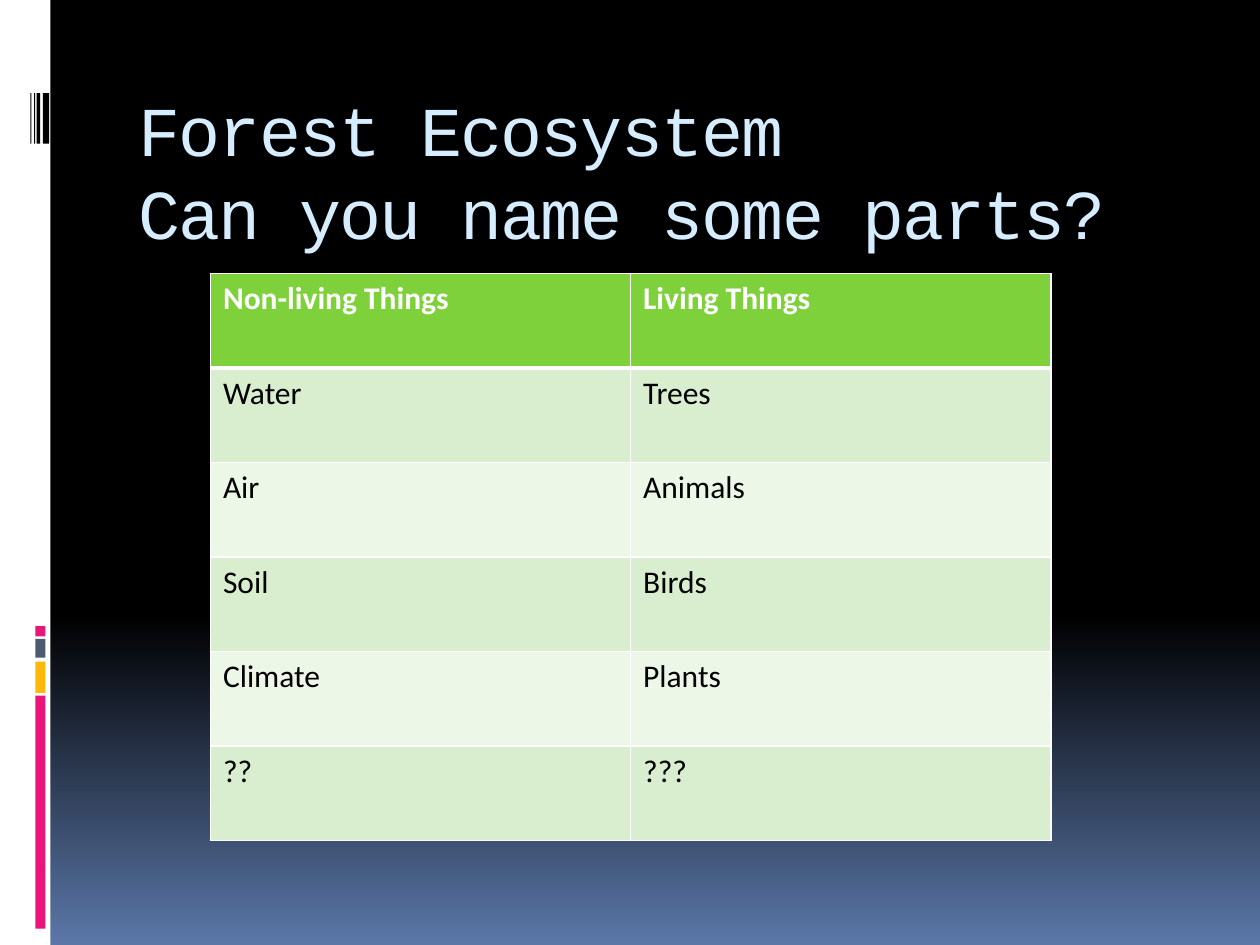
import copy

import pptx
import pptx.dml.color
import pptx.enum.shapes
import pptx.enum.text
import pptx.oxml
import pptx.oxml.ns
import pptx.util

Inches = pptx.util.Inches
Pt = pptx.util.Pt


def rgb(value):
    return pptx.dml.color.RGBColor.from_string(value)


def write(tf, text, font="Calibri", size=18, color="000000", bold=False,
          spacing=None, leading=None):
    p = tf.paragraphs[0]
    if leading:
        p.line_spacing = Pt(leading)
    for i, line in enumerate(text.split("\n")):
        if i:
            p.add_line_break()
        r = p.add_run()
        r.text = line
        r.font.name = font
        r.font.size = Pt(size)
        r.font.bold = bold
        r.font.color.rgb = rgb(color)
        if spacing is not None:
            r.font._element.set("spc", str(int(spacing * 100)))


class Deck:
    white = "FFFFFF"
    title_color = "D6ECFF"
    header_fill = "7FD13B"
    band_fills = ("D8EECE", "ECF7E8")

    def __init__(self, prs):
        self.prs = prs
        self.s = prs.slides.add_slide(prs.slide_layouts[6])

    def background(self, stops, angle):
        fill = self.s.background.fill
        fill.gradient()
        fill.gradient_angle = angle
        gs_list = self.s.element.xpath(".//a:gsLst")[0]
        while len(gs_list) < len(stops):
            gs_list.append(copy.deepcopy(gs_list[0]))
        for stop, (position, color) in zip(fill.gradient_stops, stops):
            stop.position = position
            stop.color.rgb = rgb(color)

    def bar(self, left, top, width, height, color):
        sp = self.s.shapes.add_shape(
            pptx.enum.shapes.MSO_SHAPE.RECTANGLE,
            Inches(left), Inches(top), Inches(width), Inches(height))
        sp.shadow.inherit = False
        sp.fill.solid()
        sp.fill.fore_color.rgb = rgb(color)
        sp.line.fill.background()

    def title(self, text, left, top, width, height):
        sp = self.s.shapes.add_textbox(
            Inches(left), Inches(top), Inches(width), Inches(height))
        tf = sp.text_frame
        tf.word_wrap = True
        tf.margin_top = Inches(0.13)
        tf.vertical_anchor = pptx.enum.text.MSO_ANCHOR.TOP
        write(tf, text, font="Courier New", size=40, color=self.title_color,
              spacing=-1, leading=47.5)

    def border(self, cell, side, width):
        ln = pptx.oxml.parse_xml(
            f'<a:ln{side} {pptx.oxml.ns.nsdecls("a")} w="{Pt(width)}"><a:solidFill>'
            f'<a:srgbClr val="{self.white}"/></a:solidFill></a:ln{side}>')
        cell._tc.get_or_add_tcPr().append(ln)

    def table(self, rows, left, top, width, height):
        table = self.s.shapes.add_table(
            len(rows), len(rows[0]),
            Inches(left), Inches(top), Inches(width), Inches(height)).table
        for i, row in enumerate(rows):
            header = i == 0
            widths = {"L": 1, "R": 1, "T": 3 if i == 1 else 1, "B": 3 if header else 1}
            for j, text in enumerate(row):
                cell = table.cell(i, j)
                for side, line_width in widths.items():
                    self.border(cell, side, line_width)
                cell.fill.solid()
                cell.fill.fore_color.rgb = rgb(
                    self.header_fill if header else self.band_fills[(i - 1) % 2])
                write(cell.text_frame, text, bold=header,
                      color=self.white if header else "000000")


def main():
    prs = pptx.Presentation()
    prs.slide_width = Inches(10)
    prs.slide_height = Inches(7.5)
    deck = Deck(prs)
    deck.background([(0, "000000"), (0.65, "000000"), (1, "5B77A8")], 270)

    deck.bar(0, 0, 0.4, 7.5, "FFFFFF")
    accents = [(5.52, 1.85, "EA157A"), (5.25, 0.25, "FEB80A"),
               (5.07, 0.15, "4E5B6F"), (4.97, 0.08, "EA157A")]
    for top, height, color in accents:
        deck.bar(0.28, top, 0.08, height, color)
    for left, width in [(0.34, 0.05), (0.29, 0.03), (0.27, 0.01), (0.24, 0.01)]:
        deck.bar(left, 0.74, width, 0.4, "000000")

    deck.title("Forest Ecosystem\nCan you name some parts?", 1, 0.56, 8.5, 1)
    deck.table([
        ("Non-living Things", "Living Things"),
        ("Water", "Trees"),
        ("Air", "Animals"),
        ("Soil", "Birds"),
        ("Climate", "Plants"),
        ("??", "???"),
    ], 1.67, 2.17, 6.67, 4.5)
    prs.save("out.pptx")


if __name__ == "__main__":
    main()
